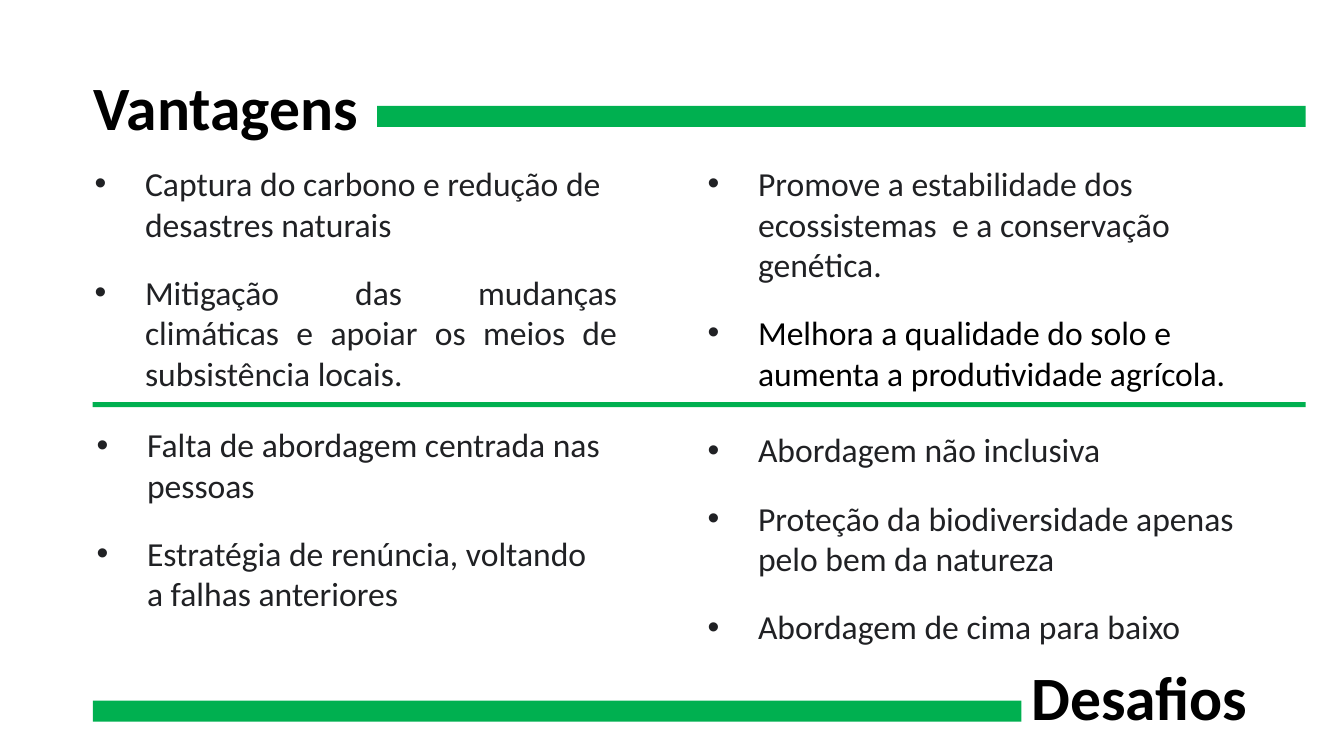
"""Build a slide comparing advantages (Vantagens) and challenges (Desafios)."""
from dataclasses import dataclass

from lxml.etree import SubElement
from pptx import Presentation
from pptx.dml.color import RGBColor
from pptx.enum.shapes import MSO_SHAPE
from pptx.enum.text import MSO_ANCHOR, MSO_AUTO_SIZE, PP_ALIGN
from pptx.oxml.ns import qn
from pptx.util import Inches, Pt


@dataclass(frozen=True)
class Theme:
    font: str = "Calibri"
    green: RGBColor = RGBColor(0x00, 0xB0, 0x50)
    black: RGBColor = RGBColor(0x00, 0x00, 0x00)
    ink: RGBColor = RGBColor(0x20, 0x21, 0x24)
    heading_size: int = 44
    body_size: int = 24
    item_gap: int = 20


THEME = Theme()
LEFT, JUSTIFY = PP_ALIGN.LEFT, PP_ALIGN.JUSTIFY

ADVANTAGES = ("Vantagens", (0.83, 0.37, 11.5, 1.45))
CHALLENGES = ("Desafios", (10.13, 6.39, 3.1, 1.11))

LISTS = [
    ((0.59, 1.57, 5.63, 1.82), [
        ("Captura do carbono e redução de desastres naturais", LEFT, THEME.ink),
        ("Mitigação das mudanças climáticas e apoiar os meios de subsistência locais.", JUSTIFY, THEME.ink),
    ]),
    ((6.67, 1.57, 6.28, 2.01), [
        ("Promove a estabilidade dos ecossistemas  e a conservação genética.", LEFT, THEME.ink),
        ("Melhora a qualidade do solo e aumenta a produtividade agrícola.", LEFT, THEME.black),
    ]),
    ((0.61, 4.16, 5.45, 2.69), [
        ("Falta de abordagem centrada nas pessoas", LEFT, THEME.ink),
        ("Estratégia de renúncia, voltando a falhas anteriores", LEFT, THEME.ink),
    ]),
    ((6.67, 4.21, 6.28, 2.69), [
        ("Abordagem não inclusiva", LEFT, THEME.ink),
        ("Proteção da biodiversidade apenas pelo bem da natureza", LEFT, THEME.ink),
        ("Abordagem de cima para baixo", LEFT, THEME.ink),
    ]),
]

MARGIN, RULE_WIDTH, BAR_WIDTH, BAR_HEIGHT = 0.92, 12.03, 9.21, 0.21
BARS = [
    (MARGIN + RULE_WIDTH - BAR_WIDTH, 1.05, BAR_WIDTH, BAR_HEIGHT),
    (MARGIN, 3.99, RULE_WIDTH, 0.05),
    (MARGIN, 6.95, BAR_WIDTH, BAR_HEIGHT),
]


def inches(area):
    return [Inches(length) for length in area]


def add_span(para, text, size, color, bold=False):
    span = para.add_run()
    span.text = text
    span.font.name = THEME.font
    span.font.size = Pt(size)
    span.font.bold = bold
    span.font.color.rgb = color


def add_bullet(para):
    props = para._p.get_or_add_pPr()
    props.set("marL", str(Inches(0.75)))
    props.set("indent", str(Inches(-0.5)))
    color = SubElement(props, qn("a:buClr"))
    SubElement(color, qn("a:srgbClr"), val=str(THEME.ink))
    SubElement(props, qn("a:buFont"), typeface="Arial")
    SubElement(props, qn("a:buChar"), char="•")


def write_heading(box, text, area):
    box.left, box.top, box.width, box.height = inches(area)
    frame = box.text_frame
    frame.word_wrap = True
    frame.auto_size = MSO_AUTO_SIZE.NONE
    frame.vertical_anchor = MSO_ANCHOR.MIDDLE
    para = frame.paragraphs[0]
    para.alignment = LEFT
    para.line_spacing = 0.9
    add_span(para, text, THEME.heading_size, THEME.black, bold=True)


def add_list(page, area, items):
    frame = page.shapes.add_textbox(*inches(area)).text_frame
    frame.word_wrap = True
    for index, (text, alignment, color) in enumerate(items):
        para = frame.add_paragraph() if index else frame.paragraphs[0]
        add_bullet(para)
        para.alignment = alignment
        if index:
            para.space_before = Pt(THEME.item_gap)
        add_span(para, text, THEME.body_size, color)


def add_bar(page, area):
    bar = page.shapes.add_shape(MSO_SHAPE.RECTANGLE, *inches(area))
    bar.shadow.inherit = False
    bar.fill.solid()
    bar.fill.fore_color.rgb = THEME.green
    bar.line.fill.background()


def main():
    deck = Presentation()
    deck.slide_width, deck.slide_height = Inches(13.33), Inches(7.5)
    page = deck.slides.add_slide(deck.slide_layouts[5])
    write_heading(page.shapes.title, *ADVANTAGES)
    for area, items in LISTS:
        add_list(page, area, items)
    for area in BARS:
        add_bar(page, area)
    text, area = CHALLENGES
    write_heading(page.shapes.add_textbox(*inches(area)), text, area)
    deck.save("out.pptx")


if __name__ == "__main__":
    main()
